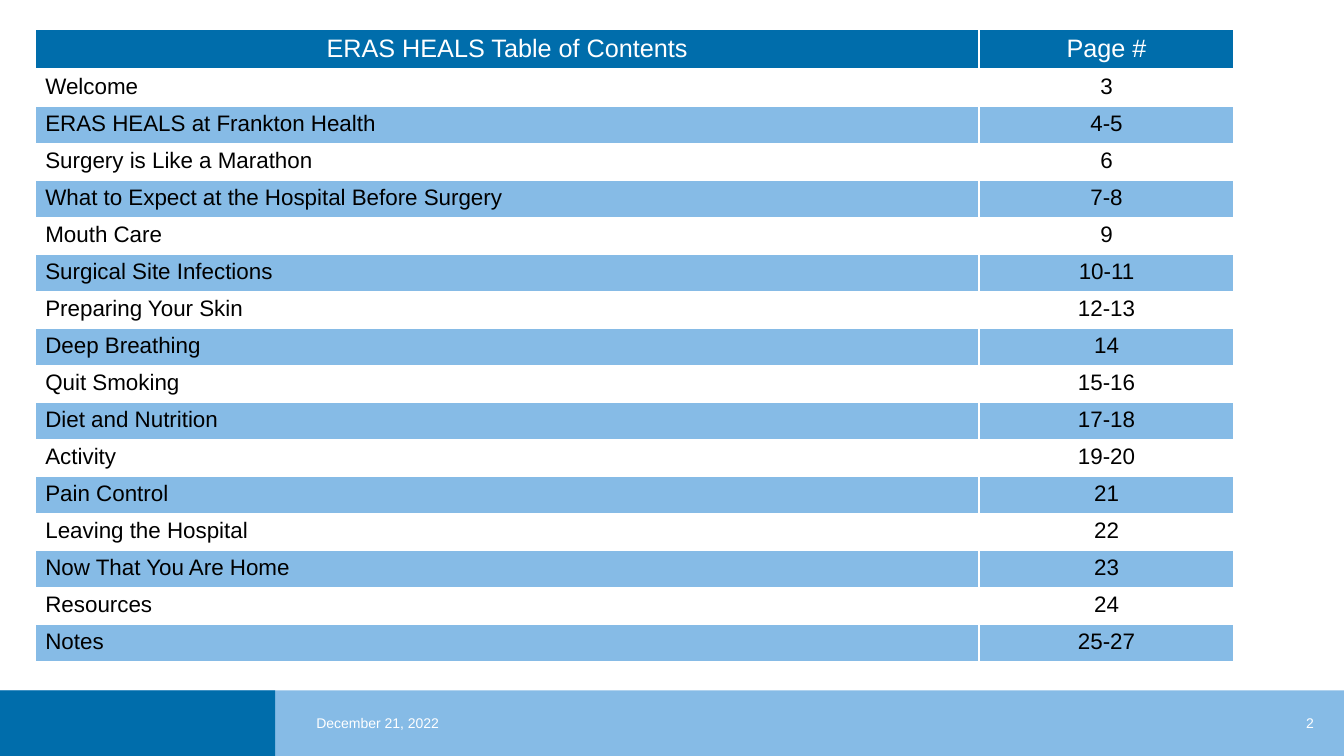
from pptx import Presentation
from pptx.dml.color import RGBColor
from pptx.enum.shapes import MSO_SHAPE
from pptx.enum.text import MSO_ANCHOR, PP_ALIGN
from pptx.oxml.ns import qn
from pptx.util import Inches, Pt
from lxml.etree import SubElement

COLORS = {"dark": "006DAB", "light": "86BBE6", "white": "FFFFFF", "black": "000000"}
FONT = "Arial"
WIDTH, HEIGHT = 13.33, 7.5
HEADER = ("ERAS HEALS Table of Contents", "Page #")
CONTENTS = [
    ("Welcome", "3"),
    ("ERAS HEALS at Frankton Health", "4-5"),
    ("Surgery is Like a Marathon", "6"),
    ("What to Expect at the Hospital Before Surgery", "7-8"),
    ("Mouth Care", "9"),
    ("Surgical Site Infections", "10-11"),
    ("Preparing Your Skin", "12-13"),
    ("Deep Breathing", "14"),
    ("Quit Smoking", "15-16"),
    ("Diet and Nutrition", "17-18"),
    ("Activity", "19-20"),
    ("Pain Control", "21"),
    ("Leaving the Hospital", "22"),
    ("Now That You Are Home", "23"),
    ("Resources", "24"),
    ("Notes", "25-27"),
]


def rgb(name):
    return RGBColor.from_string(COLORS[name])


def set_text(tf, text, size, color, align):
    p = tf.paragraphs[0]
    p.text = text
    p.alignment = align
    p.font.name = FONT
    p.font.size = Pt(size)
    p.font.color.rgb = rgb(color)


def add_bar(s, left, top, width, height, color):
    sp = s.shapes.add_shape(MSO_SHAPE.RECTANGLE, Inches(left), Inches(top),
                            Inches(width), Inches(height))
    sp.shadow.inherit = False
    sp.fill.solid()
    sp.fill.fore_color.rgb = rgb(color)
    sp.line.fill.background()


def add_label(s, left, top, width, height, text, align, right_inset=0.1):
    sp = s.shapes.add_textbox(Inches(left), Inches(top), Inches(width), Inches(height))
    tf = sp.text_frame
    tf.word_wrap = True
    tf.vertical_anchor = MSO_ANCHOR.MIDDLE
    tf.margin_right = Inches(right_inset)
    set_text(tf, text, 10, "white", align)


def add_footer(s, left, top, width, height):
    add_bar(s, left, top, width, height, "light")
    add_bar(s, left, top, 2.73, height, "dark")
    add_label(s, left + 3.04, top, 1.5, height, "December 21, 2022", PP_ALIGN.LEFT)
    add_label(s, left + width - 1.4, top, 1.4, height, "2", PP_ALIGN.RIGHT, 0.3)


def set_borders(cell, bottom):
    tcPr = cell._tc.get_or_add_tcPr()
    for side, points in (("L", 1), ("R", 1), ("T", 1), ("B", bottom)):
        ln = SubElement(tcPr, qn(f"a:ln{side}"), w=str(Pt(points)))
        fill = SubElement(ln, qn("a:solidFill"))
        SubElement(fill, qn("a:srgbClr"), val=COLORS["white"])


def fill_cell(cell, color):
    if color:
        cell.fill.solid()
        cell.fill.fore_color.rgb = rgb(color)
    else:
        cell.fill.background()


def add_contents_table(s, left, top, width, height):
    rows = [HEADER] + CONTENTS
    table = s.shapes.add_table(len(rows), 2, Inches(left), Inches(top),
                               Inches(width), Inches(height)).table
    page_width = 2.53
    table.columns[0].width = Inches(width - page_width)
    table.columns[1].width = Inches(page_width)
    for i, row in enumerate(rows):
        table.rows[i].height = Inches(height / len(rows))
        is_header = i == 0
        band = "dark" if is_header else "light" if i % 2 == 0 else None
        for j, text in enumerate(row):
            cell = table.cell(i, j)
            set_borders(cell, 3 if is_header else 1)
            fill_cell(cell, band)
            centred = is_header or j == 1
            set_text(cell.text_frame, text, 18 if is_header else 16,
                     "white" if is_header else "black",
                     PP_ALIGN.CENTER if centred else PP_ALIGN.LEFT)


def main():
    prs = Presentation()
    prs.slide_width, prs.slide_height = Inches(WIDTH), Inches(HEIGHT)
    s = prs.slides.add_slide(prs.slide_layouts[6])
    add_footer(s, 0, HEIGHT - 0.65, WIDTH, 0.65)
    add_contents_table(s, 0.35, 0.29, 11.89, 6.2)
    prs.save("out.pptx")


if __name__ == "__main__":
    main()
